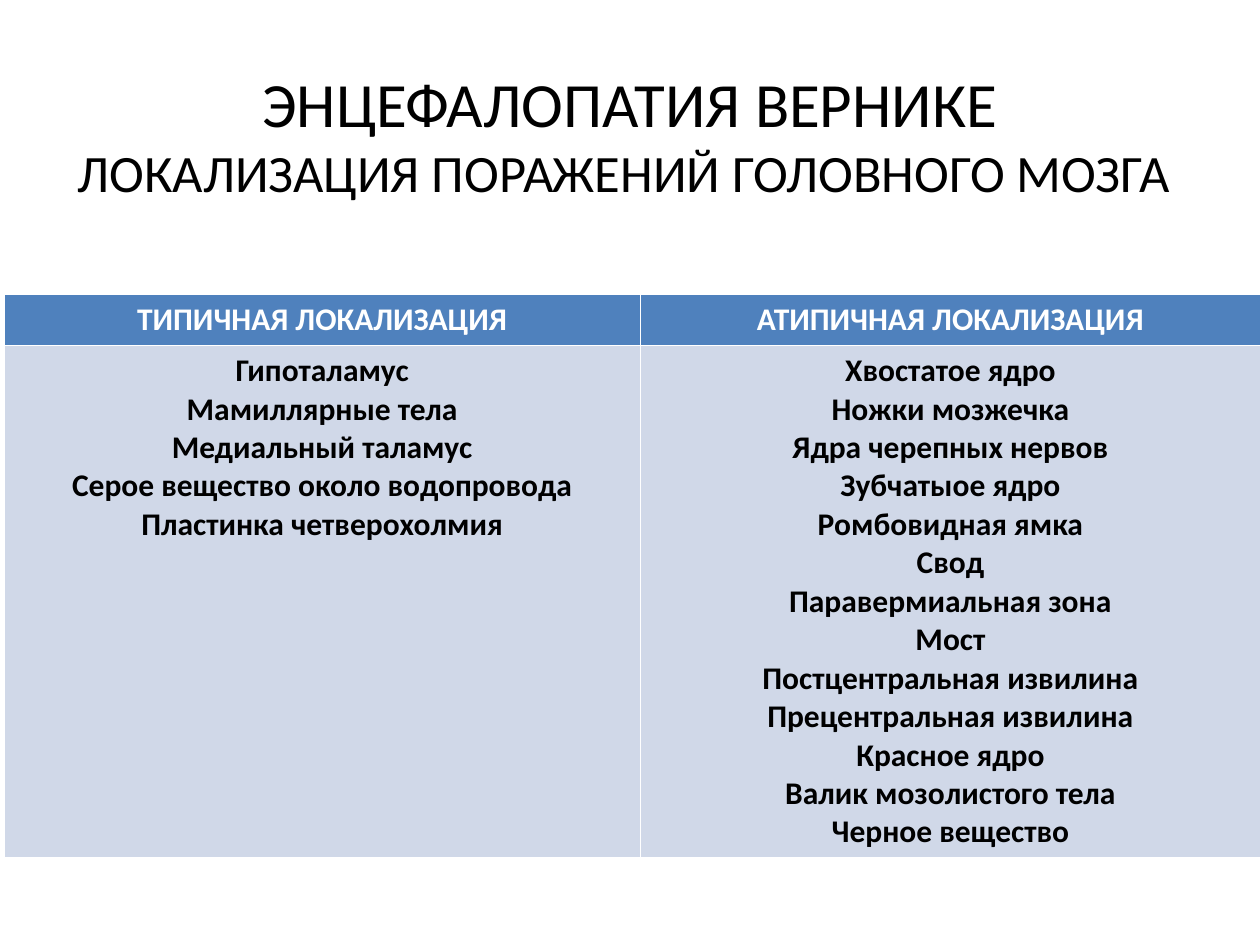
import pptx
import pptx.dml.color
import pptx.enum.text
import pptx.util

Cm, Pt = pptx.util.Cm, pptx.util.Pt
RGBColor = pptx.dml.color.RGBColor
CENTER = pptx.enum.text.PP_ALIGN.CENTER

BLACK = RGBColor(0x00, 0x00, 0x00)
WHITE = RGBColor(0xFF, 0xFF, 0xFF)
HEADER_BLUE = RGBColor(0x4F, 0x81, 0xBD)
BODY_BLUE = RGBColor(0xD0, 0xD8, 0xE8)

TITLE_LINES = [
    ("ЭНЦЕФАЛОПАТИЯ ВЕРНИКЕ", 36),
    ("ЛОКАЛИЗАЦИЯ ПОРАЖЕНИЙ ГОЛОВНОГО МОЗГА ", 30),
]
COLUMNS = [
    ("ТИПИЧНАЯ ЛОКАЛИЗАЦИЯ", 12.83, [
        "Гипоталамус",
        "Мамиллярные тела",
        "Медиальный таламус",
        "Серое вещество около водопровода",
        "Пластинка четверохолмия",
    ]),
    ("АТИПИЧНАЯ ЛОКАЛИЗАЦИЯ", 12.5, [
        "Хвостатое ядро",
        "Ножки мозжечка",
        "Ядра черепных нервов",
        "Зубчатыое ядро",
        "Ромбовидная ямка",
        "Свод",
        "Паравермиальная зона",
        "Мост",
        "Постцентральная извилина",
        "Прецентральная извилина",
        "Красное ядро",
        "Валик мозолистого тела",
        "Черное вещество",
    ]),
]
ROW_HEIGHTS = [1.03, 10.2]


def add_run(p, text, size, color, bold=False):
    r = p.add_run()
    r.text = text
    r.font.name = "Calibri"
    r.font.size = Pt(size)
    r.font.bold = bold
    r.font.color.rgb = color


def fill_cell(cell, lines, fill, color):
    """Fill a cell with one centred bold paragraph per line."""
    cell.fill.solid()
    cell.fill.fore_color.rgb = fill
    tf = cell.text_frame
    for i, line in enumerate(lines):
        p = tf.add_paragraph() if i else tf.paragraphs[0]
        p.alignment = CENTER
        add_run(p, line, 18, color, bold=True)


prs = pptx.Presentation()
prs.slide_width, prs.slide_height = Cm(25.4), Cm(19.05)
s = prs.slides.add_slide(prs.slide_layouts[5])

# Title
title = s.shapes.title
title.left, title.top = Cm(0), Cm(1.11)
title.width, title.height = prs.slide_width, Cm(3.18)
tf = title.text_frame
tf.word_wrap = True
tf.vertical_anchor = pptx.enum.text.MSO_ANCHOR.MIDDLE
p = tf.paragraphs[0]
p.alignment = CENTER
for i, (text, size) in enumerate(TITLE_LINES):
    if i:
        p.add_line_break()
    add_run(p, text, size, BLACK)

# Table of lesion sites; its default style draws the white cell borders
table = s.shapes.add_table(
    len(ROW_HEIGHTS), len(COLUMNS), Cm(0.08), Cm(5.93),
    Cm(sum(width for _, width, _ in COLUMNS)), Cm(sum(ROW_HEIGHTS))).table
for row, height in zip(table.rows, ROW_HEIGHTS):
    row.height = Cm(height)
for col, (heading, width, sites) in enumerate(COLUMNS):
    table.columns[col].width = Cm(width)
    fill_cell(table.cell(0, col), [heading], HEADER_BLUE, WHITE)
    fill_cell(table.cell(1, col), sites, BODY_BLUE, BLACK)

prs.save("out.pptx")
